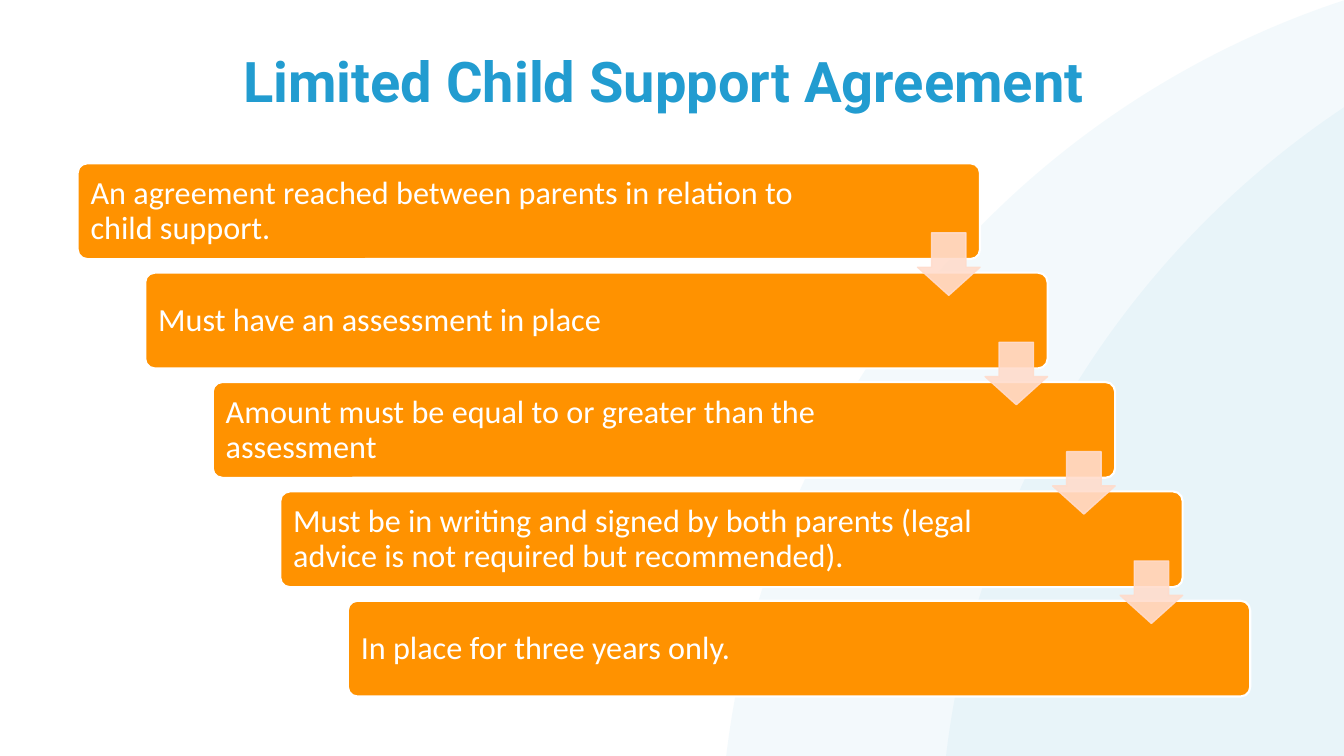
"""Build a slide of five descending steps that describe a limited child support agreement."""
from dataclasses import dataclass

import lxml.etree
import pptx
import pptx.dml.color
import pptx.enum.shapes
import pptx.enum.text
import pptx.oxml.ns
import pptx.util

Inches = pptx.util.Inches
Pt = pptx.util.Pt
RGB = pptx.dml.color.RGBColor.from_string
Shape = pptx.enum.shapes.MSO_SHAPE
Anchor = pptx.enum.text.MSO_ANCHOR
Align = pptx.enum.text.PP_ALIGN


@dataclass(frozen=True)
class Theme:
    blue: str = "229CD0"
    orange: str = "FF9200"
    peach: str = "FFDCCC"
    white: str = "FFFFFF"
    heading_font: str = "Roboto"
    body_font: str = "Calibri"
    heading_size: int = 40
    body_size: int = 23


STEPS = [
    "An agreement reached between parents in relation to child support.",
    "Must have an assessment in place",
    "Amount must be equal to or greater than the assessment",
    "Must be in writing and signed by both parents (legal advice is not required but recommended).",
    "In place for three years only.",
]
STEP_LEFT, STEP_TOP = 0.77, 1.62
STEP_WIDTH, STEP_HEIGHT = 8.95, 0.95
SHIFT_X, SHIFT_Y = 0.67, (5.96 - STEP_TOP) / (len(STEPS) - 1)
ARROW_SIZE = 0.62


def apply(target, formats):
    for name, value in formats.items():
        setattr(target, name, value)


def set_opacity(item, percent):
    for tone in item.element.spPr.iter(pptx.oxml.ns.qn("a:srgbClr")):
        alpha = lxml.etree.SubElement(tone, pptx.oxml.ns.qn("a:alpha"))
        alpha.set("val", str(percent * 1000))


class StepSlide:
    def __init__(self, presentation, theme):
        self.theme = theme
        self.slide = presentation.slides.add_slide(presentation.slide_layouts[5])

    def fill_text(self, frame, text, frame_formats, font_formats, color, align):
        apply(frame, {"word_wrap": True, **frame_formats})
        frame.text = text
        paragraph = frame.paragraphs[0]
        apply(paragraph, {"alignment": align, "line_spacing": 0.9})
        font = paragraph.runs[0].font
        apply(font, font_formats)
        font.color.rgb = RGB(color)

    def title(self, text, left, top, width, height):
        heading = self.slide.shapes.title
        apply(heading, {"left": Inches(left), "top": Inches(top),
                        "width": Inches(width), "height": Inches(height)})
        fonts = {"name": self.theme.heading_font,
                 "size": Pt(self.theme.heading_size), "bold": True}
        self.fill_text(heading.text_frame, text, {"vertical_anchor": Anchor.TOP},
                       fonts, self.theme.blue, Align.CENTER)

    def shape(self, kind, left, top, width, height, color, opacity=100,
              line=None, line_width=1, adjustments=()):
        item = self.slide.shapes.add_shape(
            kind, Inches(left), Inches(top), Inches(width), Inches(height))
        item.shadow.inherit = False
        for index, value in enumerate(adjustments):
            item.adjustments[index] = value
        item.fill.solid()
        item.fill.fore_color.rgb = RGB(color)
        if line:
            item.line.width = Pt(line_width)
            item.line.color.rgb = RGB(line)
        else:
            item.line.fill.background()
        if opacity < 100:
            set_opacity(item, opacity)
        return item

    def backdrop(self, left, top, diameter):
        circle = self.shape(Shape.OVAL, left, top, diameter, diameter, self.theme.blue, 5)
        self.slide.shapes.title.element.addprevious(circle.element)

    def step(self, text, left, top, text_width):
        self.shape(Shape.ROUNDED_RECTANGLE, left, top, STEP_WIDTH, STEP_HEIGHT,
                   self.theme.orange, line=self.theme.white, line_width=1.5,
                   adjustments=[0.1])
        label = self.slide.shapes.add_textbox(
            Inches(left + 0.03), Inches(top + 0.03), Inches(text_width), Inches(0.9))
        margins = {f"margin_{side}": Inches(0.1)
                   for side in ("left", "top", "right", "bottom")}
        fonts = {"name": self.theme.body_font, "size": Pt(self.theme.body_size)}
        self.fill_text(label.text_frame, text,
                       {"vertical_anchor": Anchor.MIDDLE, **margins},
                       fonts, self.theme.white, Align.LEFT)

    def arrow(self, left, top):
        self.shape(Shape.DOWN_ARROW, left, top, ARROW_SIZE, ARROW_SIZE, self.theme.peach,
                   90, line=self.theme.peach, adjustments=[0.55, 0.45])


def main():
    presentation = pptx.Presentation()
    apply(presentation, {"slide_width": Inches(13.33), "slide_height": Inches(7.5)})
    page = StepSlide(presentation, Theme())
    for left in (7.14, 9.32):
        page.backdrop(left, -0.45, 18.02)
    page.title("Limited Child Support Agreement", 0.77, 0.49, 11.62, 0.97)

    corners = [(STEP_LEFT + rank * SHIFT_X, STEP_TOP + rank * SHIFT_Y)
               for rank in range(len(STEPS))]
    for rank, (text, (left, top)) in enumerate(zip(STEPS, corners)):
        page.step(text, left, top, 7.61 if rank else 7.81)
    for left, top in corners[:-1]:
        page.arrow(left + STEP_WIDTH - ARROW_SIZE, top + 0.69)
    presentation.save("out.pptx")


if __name__ == "__main__":
    main()
